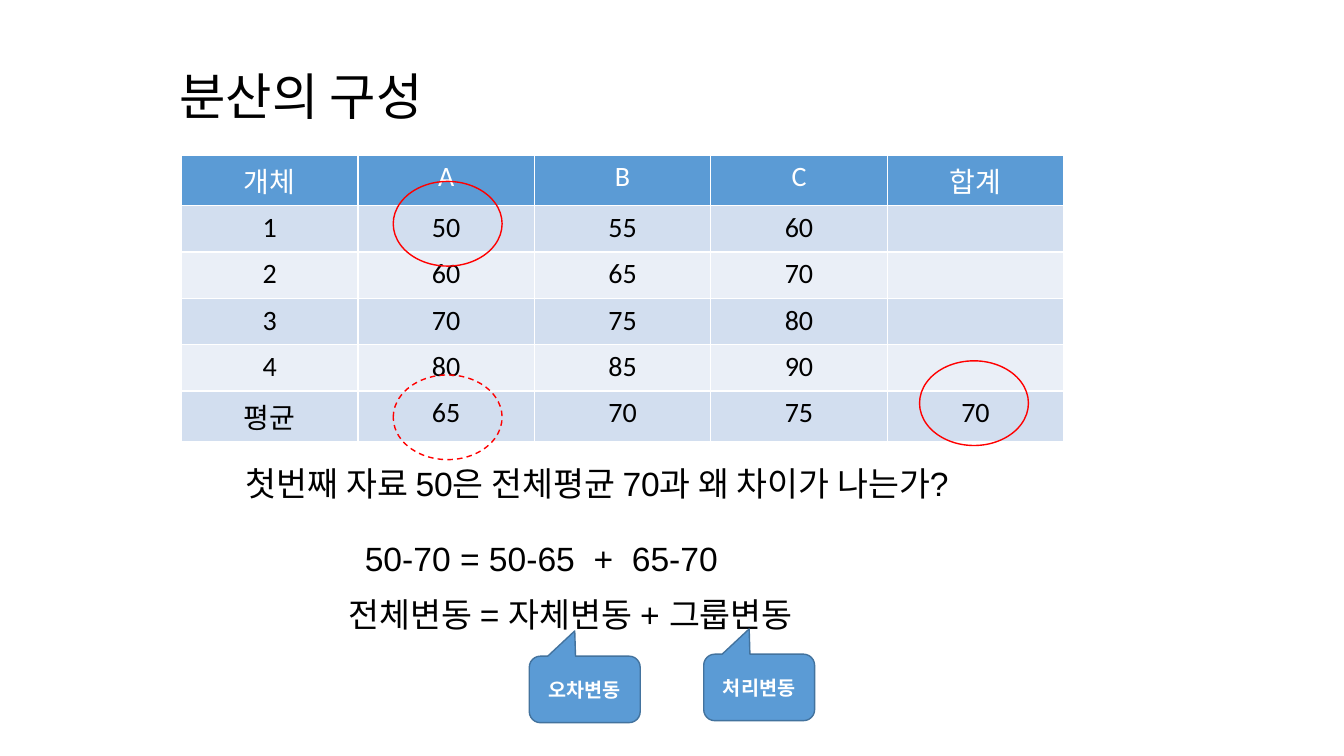
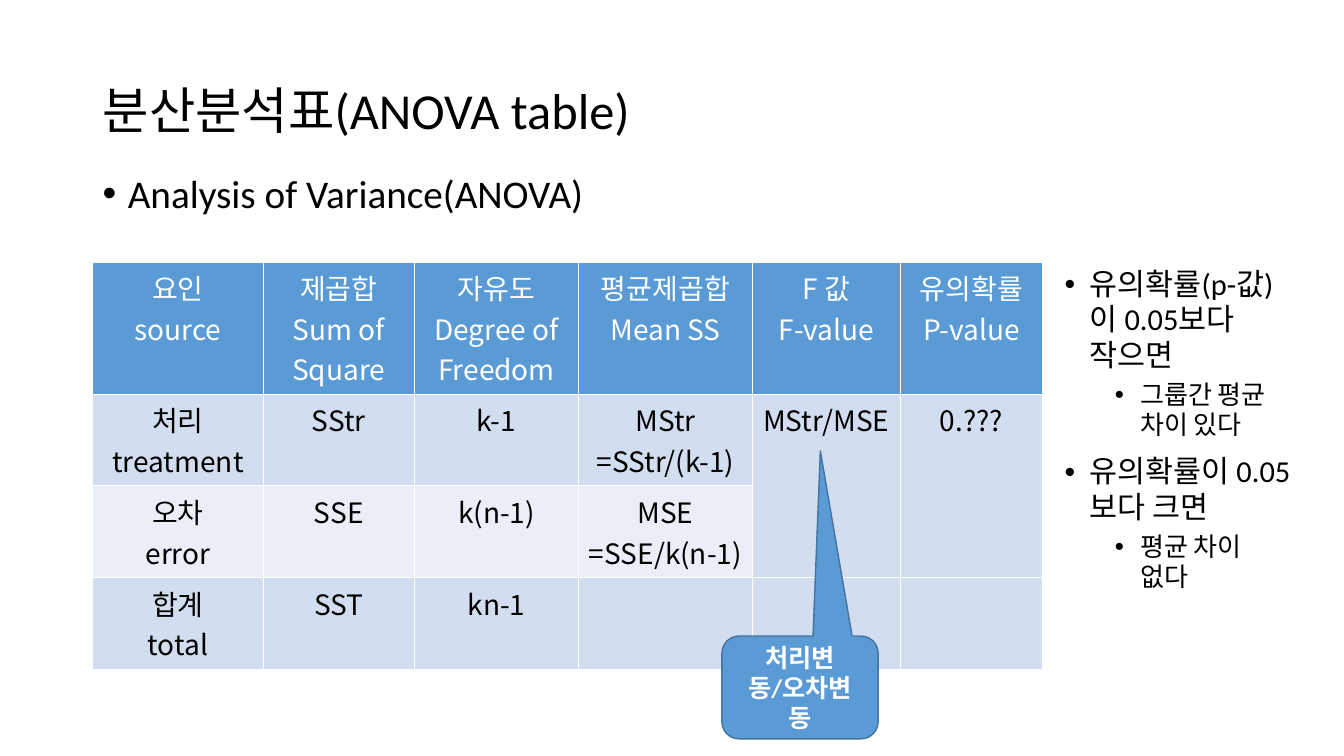
from dataclasses import dataclass
from typing import NamedTuple

from lxml.etree import SubElement
from pptx import Presentation
from pptx.dml.color import RGBColor
from pptx.enum.dml import MSO_LINE
from pptx.enum.shapes import MSO_SHAPE
from pptx.enum.text import MSO_ANCHOR, PP_ALIGN
from pptx.oxml.ns import qn
from pptx.util import Emu, Pt

EMU_PER_PX = 9144


class Box(NamedTuple):
    left: int
    top: int
    width: int
    height: int

    def inner(self, left, top, width, height):
        return Box(self.left + left, self.top + top, width, height)

    def emu(self):
        return [px(length) for length in self]


@dataclass(frozen=True)
class Theme:
    accent: str = "5B9BD5"
    accent_line: str = "43739E"
    band_dark: str = "D2DEEF"
    band_light: str = "EAEFF7"
    text: str = "000000"
    inverse: str = "FFFFFF"
    highlight: str = "FF0000"
    heading_font: str = "Calibri"
    body_font: str = "Arial"
    korean_font: str = "Noto Sans CJK KR"
    title_size: float = 36
    lead_size: float = 28
    equation_size: float = 24
    table_size: float = 20
    note_sizes: tuple = (21.7, 18.6)
    note_indents: tuple = (25, 75)
    note_spaces: tuple = (10, 5)
    label_size: float = 14
    large_label_size: float = 18
    line_width: float = 1


THEME = Theme()


def px(length):
    return Emu(length * EMU_PER_PX)


def color(value):
    return RGBColor.from_string(value)


def format_runs(paragraph, size, font_name, font_color=THEME.text, bold=False):
    for run in paragraph.runs:
        run.font.size = Pt(size)
        run.font.bold = bold
        run.font.color.rgb = color(font_color)
        run.font.name = font_name
        east_asian = SubElement(run.font._element, qn("a:ea"))
        east_asian.set("typeface", THEME.korean_font)


def add_bullet(paragraph, indent):
    properties = paragraph._p.get_or_add_pPr()
    properties.set("marL", str(px(indent)))
    properties.set("indent", str(px(-25)))
    SubElement(properties, qn("a:buFont")).set("typeface", "Arial")
    SubElement(properties, qn("a:buChar")).set("char", "•")


def add_text(slide, box, text, size, font_name):
    text_frame = slide.shapes.add_textbox(*box.emu()).text_frame
    text_frame.word_wrap = True
    text_frame.text = text
    for paragraph in text_frame.paragraphs:
        format_runs(paragraph, size, font_name)
    return text_frame


def add_title(slide, box, text):
    text_frame = add_text(slide, box, text, THEME.title_size, THEME.heading_font)
    text_frame.vertical_anchor = MSO_ANCHOR.MIDDLE
    text_frame.paragraphs[0].line_spacing = 0.9


def add_lead(slide, box, text):
    text_frame = add_text(slide, box, text, THEME.lead_size, THEME.heading_font)
    paragraph = text_frame.paragraphs[0]
    paragraph.line_spacing = 0.9
    paragraph.space_before = Pt(10)
    add_bullet(paragraph, 25)


def add_notes(slide, box, notes):
    text_frame = slide.shapes.add_textbox(*box.emu()).text_frame
    text_frame.word_wrap = True
    text_frame.text = "\n".join(text for level, text in notes)
    for paragraph, (level, text) in zip(text_frame.paragraphs, notes):
        paragraph.level = level
        paragraph.line_spacing = 0.97
        paragraph.space_before = Pt(THEME.note_spaces[level])
        add_bullet(paragraph, THEME.note_indents[level])
        format_runs(paragraph, THEME.note_sizes[level], THEME.heading_font)


def add_banded_table(slide, box, rows, column_widths, row_heights, font_name, merges=()):
    table = slide.shapes.add_table(len(rows), len(column_widths), *box.emu()).table
    for column, width in zip(table.columns, column_widths):
        column.width = px(width)
    for row, height in zip(table.rows, row_heights):
        row.height = px(height)
    bands = (THEME.band_light, THEME.band_dark)
    for row_index, row in enumerate(rows):
        is_header = row_index == 0
        fill = THEME.accent if is_header else bands[row_index % 2]
        font_color = THEME.inverse if is_header else THEME.text
        for column_index, text in enumerate(row):
            cell = table.cell(row_index, column_index)
            cell.fill.solid()
            cell.fill.fore_color.rgb = color(fill)
            if not text:
                continue
            cell.text_frame.text = text
            for paragraph in cell.text_frame.paragraphs:
                paragraph.alignment = PP_ALIGN.CENTER
                format_runs(paragraph, THEME.table_size, font_name, font_color)
    for first, last in merges:
        table.cell(*first).merge(table.cell(*last))


def add_callout(slide, box, text, pointer, size, font_name):
    shape = slide.shapes.add_shape(MSO_SHAPE.ROUNDED_RECTANGULAR_CALLOUT, *box.emu())
    shape.shadow.inherit = False
    shape.adjustments[0], shape.adjustments[1] = pointer
    shape.fill.solid()
    shape.fill.fore_color.rgb = color(THEME.accent)
    shape.line.color.rgb = color(THEME.accent_line)
    shape.line.width = Pt(THEME.line_width)
    text_frame = shape.text_frame
    text_frame.word_wrap = True
    text_frame.vertical_anchor = MSO_ANCHOR.MIDDLE
    text_frame.text = text
    paragraph = text_frame.paragraphs[0]
    paragraph.alignment = PP_ALIGN.CENTER
    format_runs(paragraph, size, font_name, THEME.inverse, True)


def add_rings(slide, box):
    rings = ((210, 26, None), (732, 204, None), (210, 218, MSO_LINE.DASH))
    for left, top, dash in rings:
        ring = slide.shapes.add_shape(MSO_SHAPE.OVAL, *box.inner(left, top, 108, 84).emu())
        ring.shadow.inherit = False
        ring.fill.background()
        ring.line.color.rgb = color(THEME.highlight)
        ring.line.width = Pt(THEME.line_width)
        if dash:
            ring.line.dash_style = dash


def add_equations(slide, box):
    lines = (
        (0, 0, 799, "첫번째 자료 50은 전체평균 70과 왜 차이가 나는가?"),
        (118, 75, 404, "50-70 = 50-65  +  65-70"),
        (102, 130, 519, "전체변동 = 자체변동 + 그룹변동"),
    )
    for left, top, width, text in lines:
        add_text(slide, box.inner(left, top, width, 50), text,
                 THEME.equation_size, THEME.body_font)
    for left, top, text in ((291, 197, "오차변동"), (464, 195, "처리변동")):
        add_callout(slide, box.inner(left, top, 110, 66), text, (-0.09, -0.88),
                    THEME.label_size, THEME.body_font)


def build_composition_slide(slide):
    rows = (
        ("개체", "A", "B", "C", "합계"),
        ("1", "50", "55", "60", ""),
        ("2", "60", "65", "70", ""),
        ("3", "70", "75", "80", ""),
        ("4", "80", "85", "90", ""),
        ("평균", "65", "70", "75", "70"),
    )
    table_box = Box(180, 154, 875, 284)
    add_title(slide, Box(168, 36, 825, 125), "분산의 구성")
    add_banded_table(slide, table_box, rows, [175] * 5, (50, 46, 46, 46, 46, 50),
                     THEME.heading_font)
    add_equations(slide, Box(234, 454, 799, 263))
    add_rings(slide, table_box)


def build_anova_slide(slide):
    rows = (
        ("요인\nsource", "제곱합\nSum of Square", "자유도\nDegree of Freedom",
         "평균제곱합\nMean SS", "F 값\nF-value", "유의확률\nP-value"),
        ("처리treatment", "SStr", "k-1", "MStr\n=SStr/(k-1)", "MStr/MSE", "0.???"),
        ("오차\nerror", "SSE", "k(n-1)", "MSE\n=SSE/k(n-1)", "", ""),
        ("합계\ntotal", "SST", "kn-1", "", "", ""),
    )
    notes = (
        (0, "유의확률(p-값)이 0.05보다 작으면"),
        (1, "그룹간 평균 차이 있다"),
        (0, "유의확률이 0.05보다 크면"),
        (1, "평균 차이 없다"),
    )
    table_box = Box(92, 260, 942, 404)
    add_title(slide, Box(92, 40, 1150, 145), "분산분석표(ANOVA table)")
    add_lead(slide, Box(92, 168, 900, 106), "Analysis of Variance(ANOVA)")
    add_banded_table(slide, table_box, rows, (169, 150, 163, 172, 147, 141),
                     (131, 91, 91, 91), THEME.korean_font,
                     [((1, column), (2, column)) for column in (4, 5)])
    add_callout(slide, table_box.inner(624, 371, 155, 102), "처리변동/오차변동",
                (0.13, -2.3), THEME.large_label_size, THEME.heading_font)
    add_notes(slide, Box(1046, 260, 245, 372), notes)


def main():
    presentation = Presentation()
    presentation.slide_width = px(1333)
    presentation.slide_height = px(750)
    for build_slide in (build_composition_slide, build_anova_slide):
        build_slide(presentation.slides.add_slide(presentation.slide_layouts[6]))
    presentation.save("out.pptx")


if __name__ == "__main__":
    main()
